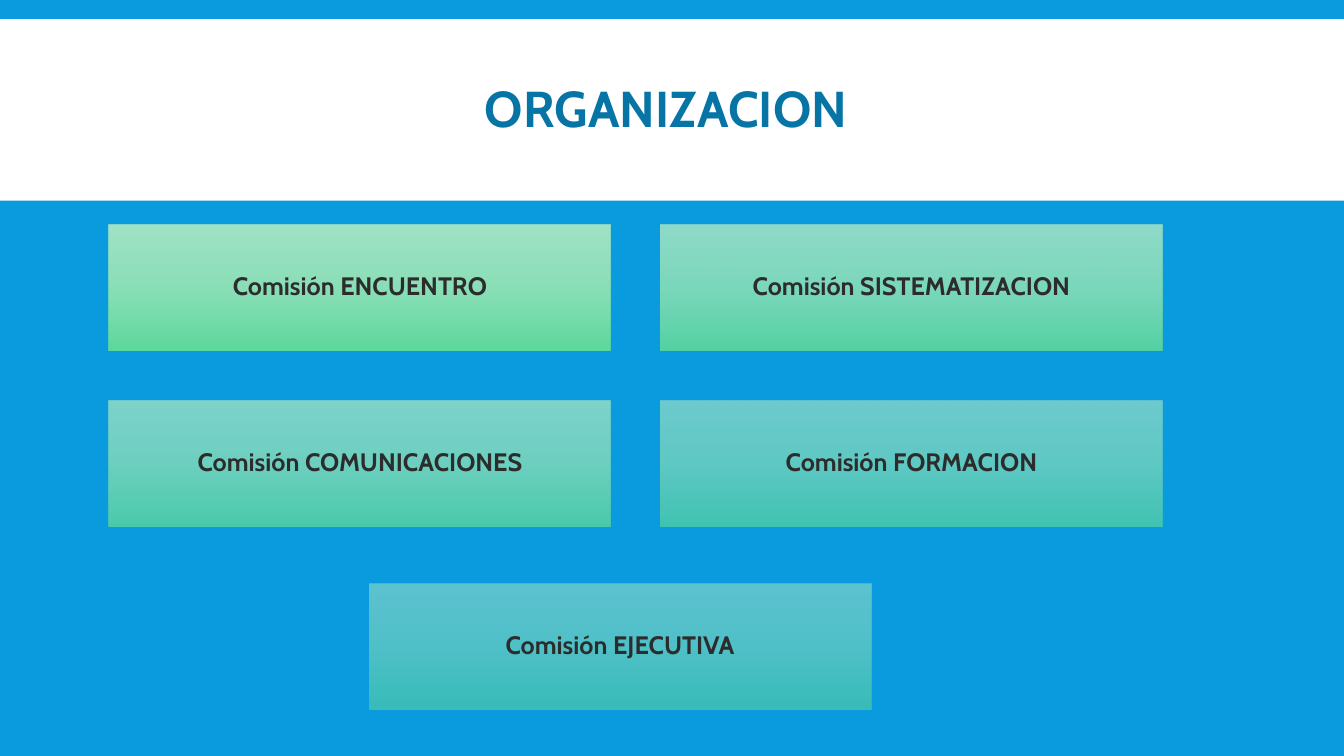
from dataclasses import dataclass

from lxml import etree
from pptx import Presentation
from pptx.dml.color import RGBColor
from pptx.enum.shapes import MSO_SHAPE
from pptx.enum.text import MSO_ANCHOR, MSO_AUTO_SIZE, PP_ALIGN
from pptx.oxml.ns import qn
from pptx.util import Inches, Pt

RECTANGLE = MSO_SHAPE.RECTANGLE
MIDDLE = MSO_ANCHOR.MIDDLE
CENTER = PP_ALIGN.CENTER
FIT_SHAPE = MSO_AUTO_SIZE.SHAPE_TO_FIT_TEXT
TITLE_ONLY_LAYOUT = 5


@dataclass(frozen=True)
class Theme:
    font: str = "Cabin"
    background: str = "099BDD"
    band: str = "FFFFFF"
    title: str = "0774A6"
    box_text: str = "2C2C2C"
    box_gradient: tuple = ((0, "B1EBC5"), (50, "98E7B4"), (100, "66DF95"))
    title_size: int = 36
    box_size: int = 18


THEME = Theme()

# Commission boxes: two columns, with the last box on its own row
BOX_WIDTH, BOX_HEIGHT = 4.98, 1.25
LEFT_COLUMN, RIGHT_COLUMN, LAST_COLUMN = 1.08, 6.55, 3.66
FIRST_ROW, SECOND_ROW, LAST_ROW = 2.23, 3.97, 5.79
COMMISSIONS = (
    ("ENCUENTRO", LEFT_COLUMN, FIRST_ROW),
    ("SISTEMATIZACION", RIGHT_COLUMN, FIRST_ROW),
    ("COMUNICACIONES", LEFT_COLUMN, SECOND_ROW),
    ("FORMACION", RIGHT_COLUMN, SECOND_ROW),
    ("EJECUTIVA", LAST_COLUMN, LAST_ROW),
)
FIRST_OPACITY, OPACITY_STEP = 90, 10


def write_text(text_frame, text, size, color, line_spacing):
    """Write one centred bold line."""
    text_frame.vertical_anchor = MIDDLE
    paragraph = text_frame.paragraphs[0]
    paragraph.alignment = CENTER
    paragraph.line_spacing = line_spacing
    run = paragraph.add_run()
    run.text = text
    run.font.name = THEME.font
    run.font.size = Pt(size)
    run.font.bold = True
    run.font.color.rgb = RGBColor.from_string(color)


def add_rectangle(slide, left, top, width, height):
    shape = slide.shapes.add_shape(
        RECTANGLE, Inches(left), Inches(top), Inches(width), Inches(height))
    shape.shadow.inherit = False
    shape.line.fill.background()
    return shape


def set_gradient(shape, stops, opacity):
    """Fill from top to bottom with evenly transparent stops."""
    shape.fill.gradient()
    gradient = shape.element.spPr.find(qn("a:gradFill"))
    for child in list(gradient):
        gradient.remove(child)
    stop_list = etree.SubElement(gradient, qn("a:gsLst"))
    for position, color in stops:
        stop = etree.SubElement(stop_list, qn("a:gs"), pos=str(position * 1000))
        fill_color = etree.SubElement(stop, qn("a:srgbClr"), val=color)
        etree.SubElement(fill_color, qn("a:alpha"), val=str(opacity * 1000))
    etree.SubElement(gradient, qn("a:lin"), ang="5400000", scaled="0")


def add_title(slide, text):
    title = slide.shapes.title
    title.left, title.top = Inches(4.67), Inches(0.8)
    title.width, title.height = Inches(3.87), Inches(0.62)
    title.text_frame.word_wrap = False
    title.text_frame.auto_size = FIT_SHAPE
    write_text(title.text_frame, text, THEME.title_size, THEME.title, 0.85)


def add_title_band(slide):
    band = add_rectangle(slide, 0, 0.19, 13.33, 1.8)
    band.fill.solid()
    band.fill.fore_color.rgb = RGBColor.from_string(THEME.band)
    # The band lies behind the title
    slide.shapes.title.element.addprevious(band.element)


def add_commission(slide, name, left, top, opacity):
    box = add_rectangle(slide, left, top, BOX_WIDTH, BOX_HEIGHT)
    set_gradient(box, THEME.box_gradient, opacity)
    text_frame = box.text_frame
    text_frame.word_wrap = True
    text_frame.margin_left = text_frame.margin_right = Inches(0.07)
    text_frame.margin_top = text_frame.margin_bottom = Inches(0.07)
    write_text(text_frame, f"Comisión {name}", THEME.box_size, THEME.box_text, 0.9)


def main():
    presentation = Presentation()
    presentation.slide_width = Inches(13.33)
    presentation.slide_height = Inches(7.5)
    slide = presentation.slides.add_slide(
        presentation.slide_layouts[TITLE_ONLY_LAYOUT])
    slide.background.fill.solid()
    slide.background.fill.fore_color.rgb = RGBColor.from_string(THEME.background)

    # Heading
    add_title(slide, "ORGANIZACION")
    add_title_band(slide)

    # Commissions, each a step more transparent
    for index, (name, left, top) in enumerate(COMMISSIONS):
        add_commission(slide, name, left, top, FIRST_OPACITY - index * OPACITY_STEP)

    presentation.save("out.pptx")


if __name__ == "__main__":
    main()
